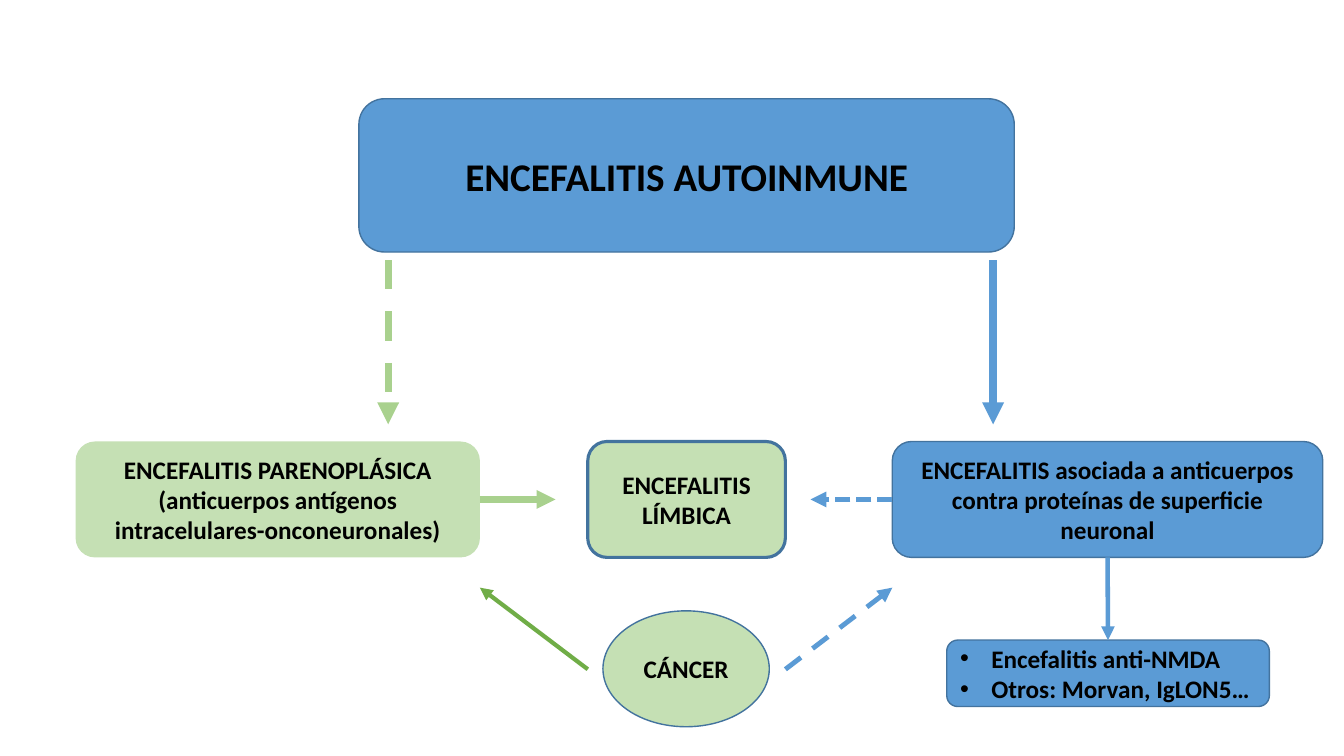
from dataclasses import dataclass
from typing import Optional

from lxml.etree import SubElement
from pptx import Presentation
from pptx.dml.color import RGBColor
from pptx.enum.dml import MSO_LINE_DASH_STYLE as Dash
from pptx.enum.shapes import MSO_CONNECTOR, MSO_SHAPE
from pptx.enum.text import MSO_ANCHOR, MSO_AUTO_SIZE, PP_ALIGN
from pptx.oxml.ns import qn
from pptx.util import Inches, Pt

BLUE = RGBColor(0x5B, 0x9B, 0xD5)
NAVY = RGBColor(0x43, 0x73, 0x9E)
PALE = RGBColor(0xC5, 0xE0, 0xB4)
LIME = RGBColor(0xA9, 0xD1, 0x8E)
GREEN = RGBColor(0x70, 0xAD, 0x47)
BLACK = RGBColor(0, 0, 0)

TOP, LEFT, BOTTOM, RIGHT = range(4)
ROW, HIGH = 4.38, 1.15  # middle row of boxes
MID = ROW + HIGH / 2
TITLE = (3.56, 0.98, 6.5, 1.52)


@dataclass
class Box:
    name: str
    area: tuple[float, float, float, float]
    lines: list[str]
    fill: Optional[RGBColor]
    edge: float = 1
    size: int = 18
    kind: MSO_SHAPE = MSO_SHAPE.ROUNDED_RECTANGLE
    holder: Optional[int] = None
    bullets: bool = False


@dataclass
class Arrow:
    start: tuple[float, float]
    end: tuple[float, float]
    color: RGBColor
    width: float
    dash: Optional[Dash] = None
    source: Optional[tuple[str, int]] = None
    target: Optional[tuple[str, int]] = None


BOXES = [
    Box("panel", TITLE, [], BLUE),
    Box("title", TITLE, ["ENCEFALITIS AUTOINMUNE"], None, edge=0, size=28, holder=0),
    Box("tumor", (0.75, ROW, 4.01, HIGH),
        ["ENCEFALITIS PARENOPLÁSICA",
         "(anticuerpos antígenos intracelulares-onconeuronales)"], PALE, edge=0),
    Box("surface", (8.85, ROW, 4.27, HIGH),
        ["ENCEFALITIS asociada a anticuerpos contra proteínas de superficie neuronal"],
        BLUE),
    Box("limbic", (5.83, ROW, 1.96, HIGH), ["ENCEFALITIS LÍMBICA"], PALE, edge=2.25),
    Box("cancer", (5.98, 6.06, 1.65, 1.15), ["CÁNCER"], PALE, kind=MSO_SHAPE.OVAL),
    Box("types", (9.39, 6.35, 3.2, 0.66),
        ["Encefalitis anti-NMDA", "Otros: Morvan, IgLON5…"],
        BLUE, holder=1, bullets=True),
]

ARROWS = [
    Arrow((3.85, 2.58), (3.85, 4.21), LIME, 5.25, Dash.DASH),
    Arrow((9.85, 2.58), (9.85, 4.21), BLUE, 5.25),
    Arrow((4.76, MID), (5.51, MID), LIME, 4.5, source=("tumor", RIGHT)),
    Arrow((8.85, MID), (8.04, MID), BLUE, 3.75, Dash.SQUARE_DOT,
          source=("surface", LEFT)),
    Arrow((5.83, 6.64), (4.76, 5.83), GREEN, 3),
    Arrow((7.79, 6.64), (8.85, 5.83), BLUE, 3.5, Dash.DASH),
    Arrow((10.99, ROW + HIGH), (10.99, 6.35), BLUE, 3.25,
          source=("surface", BOTTOM), target=("types", TOP)),
]


def add_text(shape, box: Box) -> None:
    frame = shape.text_frame
    frame.text = "\n".join(box.lines)
    frame.word_wrap = True
    frame.auto_size = MSO_AUTO_SIZE.NONE
    frame.vertical_anchor = MSO_ANCHOR.MIDDLE
    for para in frame.paragraphs:
        para.alignment = PP_ALIGN.LEFT if box.bullets else PP_ALIGN.CENTER
        para.space_before = Pt(0)
        if box.bullets:
            props = para._p.get_or_add_pPr()
            props.set("marL", str(Inches(0.31)))
            props.set("indent", str(Inches(-0.31)))
            SubElement(props, qn("a:buFont"), typeface="Arial")
            SubElement(props, qn("a:buChar"), char="•")
        font = para.font
        font.name, font.size, font.bold = "Calibri", Pt(box.size), True
        font.color.rgb = BLACK


def add_box(slide, box: Box):
    area = [Inches(v) for v in box.area]
    if box.holder is None:
        shape = slide.shapes.add_shape(box.kind, *area)
        shape.shadow.inherit = False
    else:
        shape = slide.placeholders[box.holder]
        shape.left, shape.top, shape.width, shape.height = area
        # Bring the placeholder in front of the shapes drawn so far
        slide.shapes.element.append(shape.element)
        if box.fill:
            geom = SubElement(shape.element.spPr, qn("a:prstGeom"), prst="roundRect")
            SubElement(geom, qn("a:avLst"))
    if box.fill:
        shape.fill.solid()
        shape.fill.fore_color.rgb = box.fill
    if box.edge:
        shape.line.color.rgb = NAVY
        shape.line.width = Pt(box.edge)
    else:
        shape.line.fill.background()
    if box.lines:
        add_text(shape, box)
    return shape


def add_arrow(slide, arrow: Arrow, shapes: dict) -> None:
    ends = [Inches(v) for v in arrow.start + arrow.end]
    link = slide.shapes.add_connector(MSO_CONNECTOR.STRAIGHT, *ends)
    if arrow.source:
        name, side = arrow.source
        link.begin_connect(shapes[name], side)
    if arrow.target:
        name, side = arrow.target
        link.end_connect(shapes[name], side)
    link.line.color.rgb = arrow.color
    link.line.width = Pt(arrow.width)
    if arrow.dash:
        link.line.dash_style = arrow.dash
    SubElement(link.line._get_or_add_ln(), qn("a:tailEnd"), type="triangle")
    SubElement(link.element.spPr, qn("a:effectLst"))


def main() -> None:
    deck = Presentation()
    deck.slide_width, deck.slide_height = Inches(13.33), Inches(7.5)
    slide = deck.slides.add_slide(deck.slide_layouts[1])
    shapes = {box.name: add_box(slide, box) for box in BOXES}
    for arrow in ARROWS:
        add_arrow(slide, arrow, shapes)
    deck.save("out.pptx")


if __name__ == "__main__":
    main()
